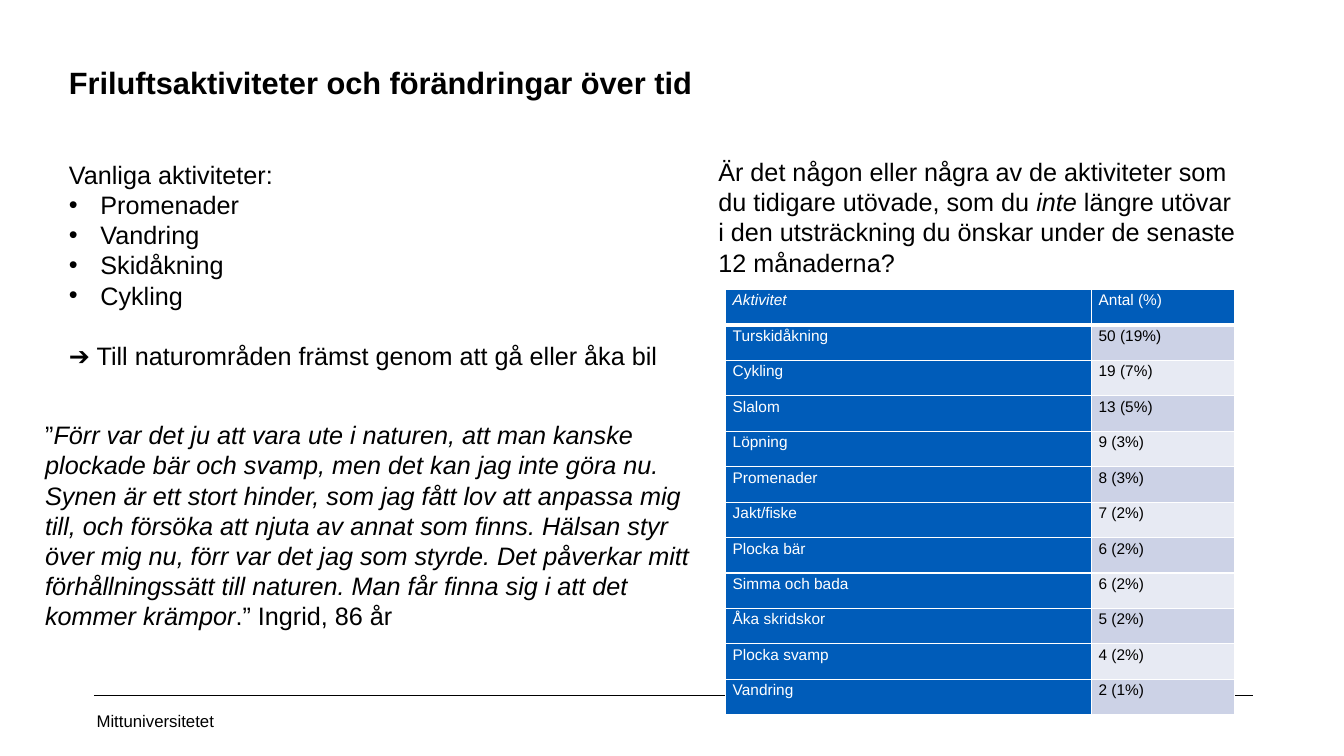
from lxml.etree import SubElement
from pptx import Presentation
from pptx.dml.color import RGBColor
from pptx.enum.shapes import MSO_CONNECTOR
from pptx.enum.text import MSO_ANCHOR, MSO_AUTO_SIZE, PP_ALIGN
from pptx.oxml.ns import qn
from pptx.util import Pt

BLACK, WHITE, BLUE = "000000", "FFFFFF", "005CB9"
BANDS = ["CCD2E6", "E7EAF3"]
LEAD = 21.6

ROWS = [
    ("Aktivitet", "Antal (%)"),
    ("Turskidåkning", "50 (19%)"),
    ("Cykling", "19 (7%)"),
    ("Slalom", "13 (5%)"),
    ("Löpning", "9 (3%)"),
    ("Promenader", "8 (3%)"),
    ("Jakt/fiske", "7 (2%)"),
    ("Plocka bär", "6 (2%)"),
    ("Simma och bada", "6 (2%)"),
    ("Åka skridskor", "5 (2%)"),
    ("Plocka svamp", "4 (2%)"),
    ("Vandring", "2 (1%)"),
]


def color(code):
    return RGBColor.from_string(code)


def write(para, *parts, size=18, ink=BLACK, bold=False, lead=None, before=0):
    """Fill a paragraph; a part given as a one-item list is italic."""
    para.alignment = PP_ALIGN.LEFT
    para.space_before = Pt(before)
    if lead:
        para.line_spacing = lead
    for part in parts:
        slant = isinstance(part, list)
        run = para.add_run()
        run.text = part[0] if slant else part
        font = run.font
        font.name, font.size = "Arial", Pt(size)
        font.bold, font.italic = bold, slant
        font.color.rgb = color(ink)


def indent(para, mark=None, hang=0):
    props = para._p.get_or_add_pPr()
    props.set("marL", str(Pt(hang)))
    props.set("indent", str(-Pt(hang)))
    if mark:
        SubElement(props, qn("a:buFont"), typeface="Arial")
        SubElement(props, qn("a:buChar"), char=mark)
    else:
        SubElement(props, qn("a:buNone"))


def border(cell, foot=1):
    props = cell._tc.get_or_add_tcPr()
    for side, width in (("L", 1), ("R", 1), ("T", 1), ("B", foot)):
        line = SubElement(props, qn("a:ln" + side), w=str(Pt(width)))
        fill = SubElement(line, qn("a:solidFill"))
        SubElement(fill, qn("a:srgbClr"), val=WHITE)


class Deck:
    def __init__(self):
        self.file = Presentation()
        self.file.slide_width, self.file.slide_height = Pt(960), Pt(540)
        self.slide = self.file.slides.add_slide(self.file.slide_layouts[1])
        self.shapes = self.slide.shapes

    def place(self, holder, *box):
        holder.left, holder.top, holder.width, holder.height = map(Pt, box)
        frame = holder.text_frame
        frame.word_wrap = True
        frame.auto_size = MSO_AUTO_SIZE.NONE
        frame.vertical_anchor = MSO_ANCHOR.TOP
        return frame

    def title(self, text, *box):
        frame = self.place(self.shapes.title, *box)
        write(frame.paragraphs[0], text, size=22, bold=True, lead=Pt(36))

    def list(self, head, items, end, *box):
        frame = self.place(self.slide.placeholders[1], *box)
        para = frame.paragraphs[0]
        indent(para)
        write(para, head, lead=Pt(LEAD))
        for item in items:
            para = frame.add_paragraph()
            indent(para, "•", 22.5)
            write(para, item, lead=Pt(LEAD))
        para = frame.add_paragraph()
        indent(para)
        write(para, end, lead=Pt(LEAD), before=LEAD)

    def text(self, parts, *box, **style):
        frame = self.place(self.shapes.add_textbox(0, 0, 0, 0), *box)
        write(frame.paragraphs[0], *parts, **style)
        return frame

    def line(self, *ends):
        rule = self.shapes.add_connector(MSO_CONNECTOR.STRAIGHT, *map(Pt, ends))
        rule.line.color.rgb = color(BLACK)
        rule.line.width = Pt(0.25)
        SubElement(rule._element.spPr, qn("a:effectLst"))

    def table(self, rows, widths, high, left, top):
        frame = self.shapes.add_table(
            len(rows), len(widths), Pt(left), Pt(top),
            Pt(sum(widths)), Pt(high * len(rows)))
        grid = frame.table
        for col, width in zip(grid.columns, widths):
            col.width = Pt(width)
        for i, row in enumerate(rows):
            grid.rows[i].height = Pt(high)
            for j, text in enumerate(row):
                cell = grid.cell(i, j)
                cell.margin_left = cell.margin_right = Pt(5)
                cell.margin_top = cell.margin_bottom = 0
                border(cell, foot=1 if i else 3)
                data = i > 0 and j > 0
                cell.fill.solid()
                cell.fill.fore_color.rgb = color(BANDS[(i - 1) % 2] if data else BLUE)
                part = text if i or j else [text]
                write(cell.text_frame.paragraphs[0], part, size=11,
                      ink=BLACK if data else WHITE, lead=1.15)


def main():
    deck = Deck()
    deck.title("Friluftsaktiviteter och förändringar över tid", 42, 32.4, 774, 51)
    deck.list("Vanliga aktiviteter:",
              ["Promenader", "Vandring", "Skidåkning", "Cykling"],
              "➔ Till naturområden främst genom att gå eller åka bil",
              42, 110, 447, 160)
    foot = deck.text(["Mittuniversitetet"], 66, 500.5, 216, 29, size=12)
    foot.vertical_anchor = MSO_ANCHOR.MIDDLE
    foot.margin_left = Pt(3)
    deck.line(67, 496.8, 895, 496.8)
    deck.table(ROWS, [261.4, 102.2], 25.32, 518.4, 206.8)
    deck.text(["Är det någon eller några av de aktiviteter som du tidigare "
               "utövade, som du ", ["inte"],
               " längre utövar i den utsträckning du önskar under de senaste "
               "12 månaderna?"],
              506, 108, 387.4, 94.3, lead=Pt(LEAD))
    deck.text(["”",
               ["Förr var det ju att vara ute i naturen, att man kanske "
                "plockade bär och svamp, men det kan jag inte göra nu. Synen "
                "är ett stort hinder, som jag fått lov att anpassa mig till, "
                "och försöka att njuta av annat som finns. Hälsan styr över "
                "mig nu, förr var det jag som styrde. Det påverkar mitt "
                "förhållningssätt till naturen. Man får finna sig i att det "
                "kommer krämpor"],
               ".” Ingrid, 86 år"],
              25.2, 296, 488, 204, lead=Pt(LEAD))
    deck.file.save("out.pptx")


if __name__ == "__main__":
    main()
